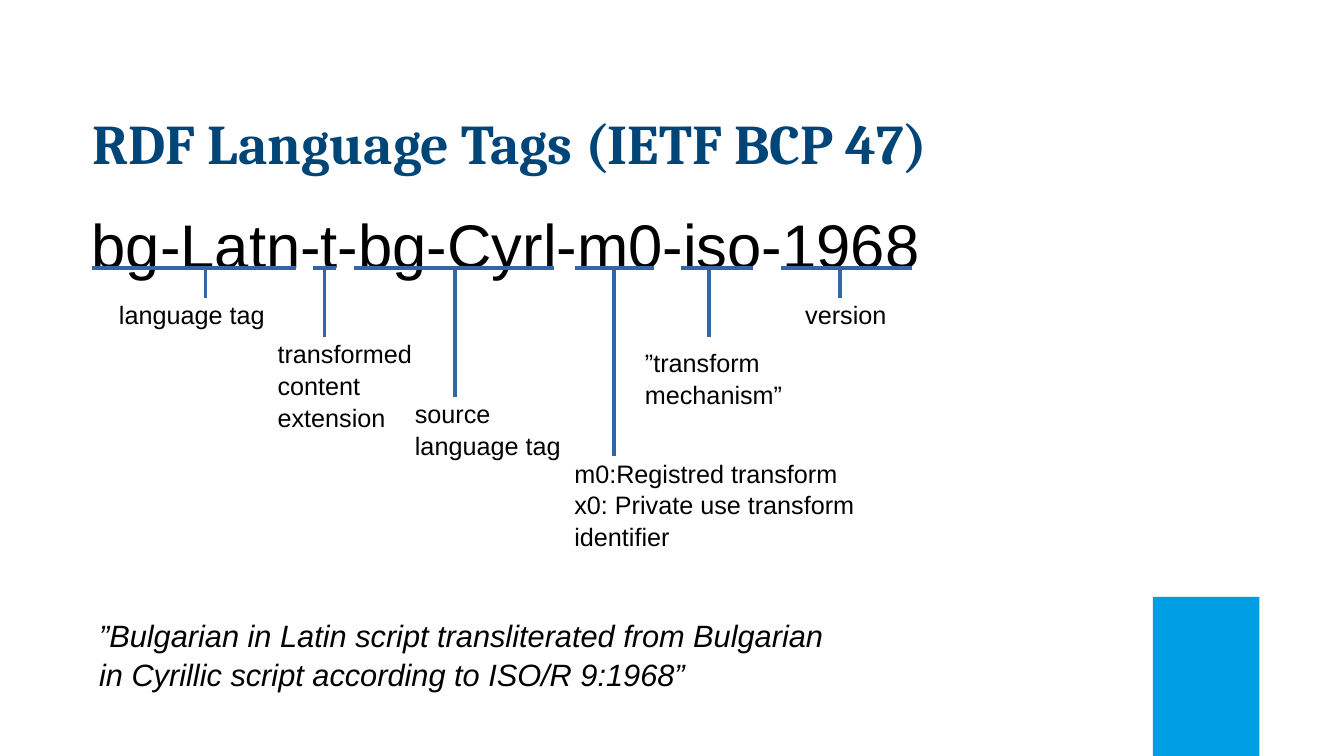
from collections import namedtuple
from dataclasses import dataclass

from lxml import etree
from pptx import Presentation
from pptx.dml.color import RGBColor
from pptx.enum.shapes import MSO_CONNECTOR, MSO_SHAPE
from pptx.enum.text import MSO_ANCHOR, PP_ALIGN
from pptx.oxml.ns import qn
from pptx.util import Cm, Pt


@dataclass(frozen=True)
class Theme:
    heading_font: str = "Cambria"
    body_font: str = "Arial"
    heading: RGBColor = RGBColor(0x00, 0x45, 0x77)
    text: RGBColor = RGBColor(0x00, 0x00, 0x00)
    line: RGBColor = RGBColor(0x34, 0x65, 0xA4)
    accent: RGBColor = RGBColor(0x00, 0x9F, 0xE3)
    title_size: int = 40
    tag_size: int = 44
    label_size: int = 18
    quote_size: int = 22
    line_width: float = 2.83


THEME = Theme()

# All lengths are in centimetres
Box = namedtuple("Box", "left top width height")

# start and end of the underline, stem position and length,
# then the label's left edge, gap below the stem, width, height and lines
Subtag = namedtuple("Subtag", "start end stem depth left gap width height lines")
SUBTAGS = [
    Subtag(0, 5.16, 2.87, 0.74, 0.69, 0, 5.16, 1, ["language tag"]),
    Subtag(5.59, 6.17, 5.87, 1.74, 4.69, 0, 4, 3, ["transformed content extension"]),
    Subtag(6.61, 11.66, 9.17, 3.24, 8.15, 0, 4, 3, ["source language tag"]),
    Subtag(12.19, 14.17, 13.16, 4.74, 12.17, 0, 7.5, 2.5,
           ["m0:Registred transform", "x0: Private use transform identifier"]),
    Subtag(14.86, 16.66, 15.57, 1.74, 13.95, 0.21, 3.5, 1, ["”transform mechanism”"]),
    Subtag(17.38, 20.68, 18.87, 0.74, 17.99, 0, 5.16, 1, ["version"]),
]


def place(shape, box):
    shape.left, shape.top, shape.width, shape.height = (Cm(value) for value in box)


def clear_margins(frame):
    frame.margin_left = frame.margin_right = frame.margin_top = frame.margin_bottom = 0
    frame.word_wrap = True


def add_run(paragraph, text, size, font_name, color, bold=False, italic=False):
    run = paragraph.add_run()
    run.text = text
    font = run.font
    font.size, font.name = Pt(size), font_name
    font.bold, font.italic = bold, italic
    font.color.rgb = color


def add_text(slide, box, lines, size, italic=False, line_spacing=1.05):
    frame = slide.shapes.add_textbox(*(Cm(value) for value in box)).text_frame
    clear_margins(frame)
    paragraph = frame.paragraphs[0]
    paragraph.line_spacing = line_spacing
    for index, line in enumerate(lines):
        if index:
            paragraph.add_line_break()
        add_run(paragraph, line, size, THEME.body_font, THEME.text, italic=italic)
    return frame


def add_line(slide, x1, y1, x2, y2):
    connector = slide.shapes.add_connector(
        MSO_CONNECTOR.STRAIGHT, Cm(x1), Cm(y1), Cm(x2), Cm(y2))
    connector.line.color.rgb = THEME.line
    connector.line.width = Pt(THEME.line_width)
    properties = connector.element.find(qn("p:spPr"))
    etree.SubElement(properties, qn("a:effectLst"))


def add_accent_block(slide, box):
    block = slide.shapes.add_shape(MSO_SHAPE.RECTANGLE, *(Cm(value) for value in box))
    block.shadow.inherit = False
    block.fill.solid()
    block.fill.fore_color.rgb = THEME.accent
    block.line.fill.background()


def fill_title(slide, box, text):
    title = slide.shapes.title
    place(title, box)
    frame = title.text_frame
    clear_margins(frame)
    frame.vertical_anchor = MSO_ANCHOR.BOTTOM
    paragraph = frame.paragraphs[0]
    paragraph.alignment = PP_ALIGN.LEFT
    paragraph.line_spacing = 0.9
    add_run(paragraph, text, THEME.title_size, THEME.heading_font, THEME.heading, bold=True)


def add_tag_diagram(slide, box, tag):
    # The tag itself
    frame = add_text(slide, box, [tag], THEME.tag_size, line_spacing=1)
    frame.margin_top = Cm(0.18)

    # An underline, a stem and a label for each subtag
    baseline = box.top + box.height
    for subtag in SUBTAGS:
        stem_x = box.left + subtag.stem
        stem_end = baseline + subtag.depth
        add_line(slide, box.left + subtag.start, baseline, box.left + subtag.end, baseline)
        add_line(slide, stem_x, baseline, stem_x, stem_end)
        label_box = Box(box.left + subtag.left, stem_end + subtag.gap,
                        subtag.width, subtag.height)
        add_text(slide, label_box, subtag.lines, THEME.label_size)


def main():
    presentation = Presentation()
    presentation.slide_width, presentation.slide_height = Cm(33.88), Cm(19.05)
    title_only = presentation.slide_layouts[5]
    slide = presentation.slides.add_slide(title_only)

    add_accent_block(slide, Box(29.06, 15.04, 2.69, 4.01))
    fill_title(slide, Box(2.34, 2.06, 29.21, 2.39), "RDF Language Tags (IETF BCP 47)")
    add_tag_diagram(slide, Box(2.31, 5.03, 21.26, 1.73), "bg-Latn-t-bg-Cyrl-m0-iso-1968")

    # Reading of the whole tag
    add_text(slide, Box(2.5, 15.5, 19, 1),
             ["”Bulgarian in Latin script transliterated from Bulgarian "
              "in Cyrillic script according to ISO/R 9:1968”"],
             THEME.quote_size, italic=True)

    presentation.save("out.pptx")


if __name__ == "__main__":
    main()
